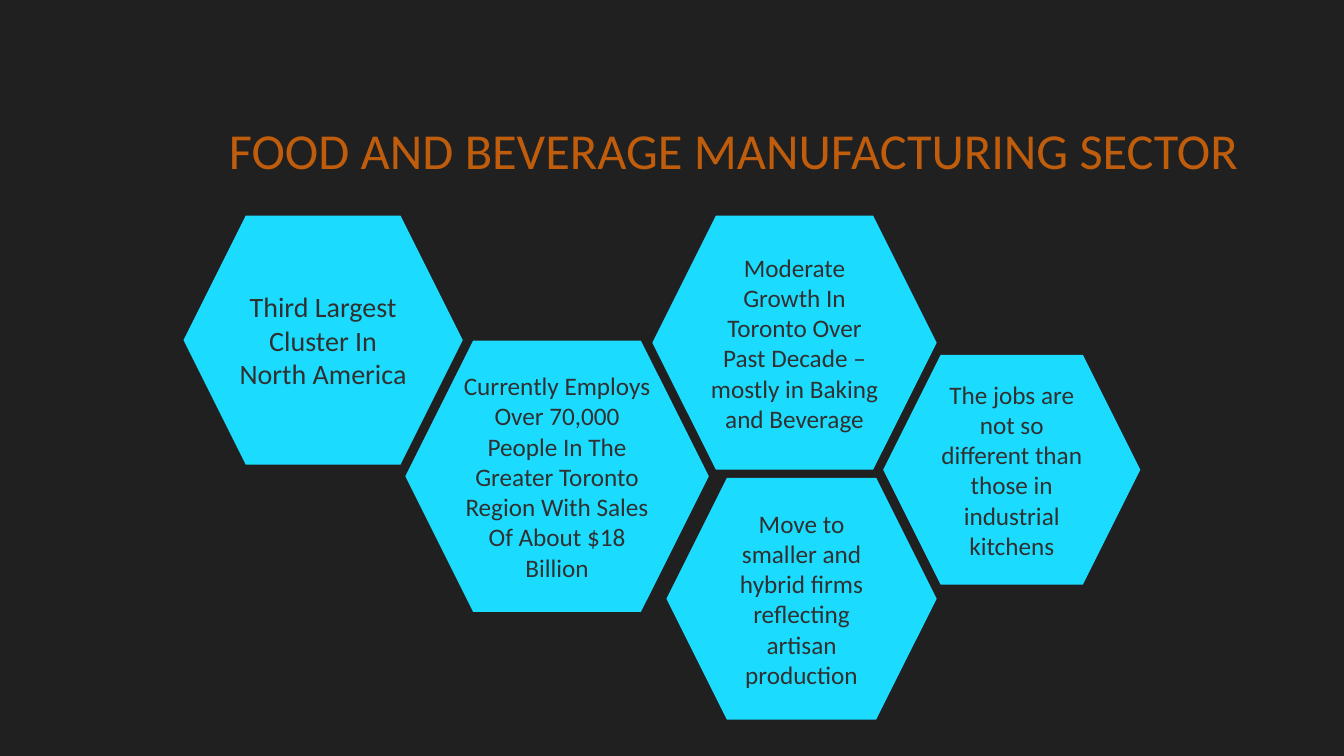
import pptx
import pptx.dml.color
import pptx.enum.shapes
import pptx.enum.text
import pptx.util
from pptx.util import Inches

BACKGROUND = pptx.dml.color.RGBColor(0x20, 0x20, 0x20)
ORANGE = pptx.dml.color.RGBColor(0xC0, 0x5D, 0x0C)
CYAN = pptx.dml.color.RGBColor(0x1B, 0xDC, 0xFF)
DARK_GREY = pptx.dml.color.RGBColor(0x30, 0x30, 0x30)

TITLE = "FOOD AND BEVERAGE MANUFACTURING SECTOR"
HEXAGONS = [
    (1.82, 2.14, 2.77, 2.47, 20, "Third Largest Cluster In North America"),
    (4.02, 3.38, 3.01, 2.69, 18,
     "Currently Employs Over 70,000 People In The Greater Toronto Region "
     "With Sales Of About $18 Billion"),
    (6.47, 2.14, 2.82, 2.52, 18,
     "Moderate Growth In Toronto Over Past Decade – mostly in Baking and Beverage"),
    (6.61, 4.74, 2.68, 2.4, 18,
     "Move to smaller and hybrid firms reflecting artisan production"),
    (8.76, 3.52, 2.55, 2.28, 18,
     "The jobs are not so different than those in industrial kitchens"),
]


def write_text(shape, text, size, color, alignment, anchor):
    """Write one formatted run into a shape and return its paragraph."""
    frame = shape.text_frame
    frame.word_wrap = True
    frame.auto_size = pptx.enum.text.MSO_AUTO_SIZE.NONE
    frame.vertical_anchor = anchor
    paragraph = frame.paragraphs[0]
    paragraph.alignment = alignment
    run = paragraph.add_run()
    run.text = text
    run.font.name = "Calibri"
    run.font.size = pptx.util.Pt(size)
    run.font.color.rgb = color
    return paragraph


def set_title(slide):
    """Place and format the slide title."""
    title = slide.shapes.title
    title.left, title.top = Inches(2.17), Inches(1.03)
    title.width, title.height = Inches(10.7), Inches(0.8)
    paragraph = write_text(title, TITLE, 36, ORANGE,
                           pptx.enum.text.PP_ALIGN.LEFT,
                           pptx.enum.text.MSO_ANCHOR.BOTTOM)
    paragraph.line_spacing = 0.85


def add_hexagon(slide, left, top, width, height, size, text):
    """Add a cyan hexagon with centred text."""
    hexagon = slide.shapes.add_shape(
        pptx.enum.shapes.MSO_SHAPE.HEXAGON,
        Inches(left), Inches(top), Inches(width), Inches(height))
    hexagon.shadow.inherit = False
    hexagon.fill.solid()
    hexagon.fill.fore_color.rgb = CYAN
    hexagon.line.fill.background()
    write_text(hexagon, text, size, DARK_GREY,
               pptx.enum.text.PP_ALIGN.CENTER,
               pptx.enum.text.MSO_ANCHOR.MIDDLE)


def main():
    """Build the slide and save the presentation."""
    presentation = pptx.Presentation()
    presentation.slide_width = Inches(13.33)
    presentation.slide_height = Inches(7.5)
    slide = presentation.slides.add_slide(presentation.slide_layouts[5])
    slide.background.fill.solid()
    slide.background.fill.fore_color.rgb = BACKGROUND
    set_title(slide)
    for hexagon in HEXAGONS:
        add_hexagon(slide, *hexagon)
    presentation.save("out.pptx")


if __name__ == "__main__":
    main()
